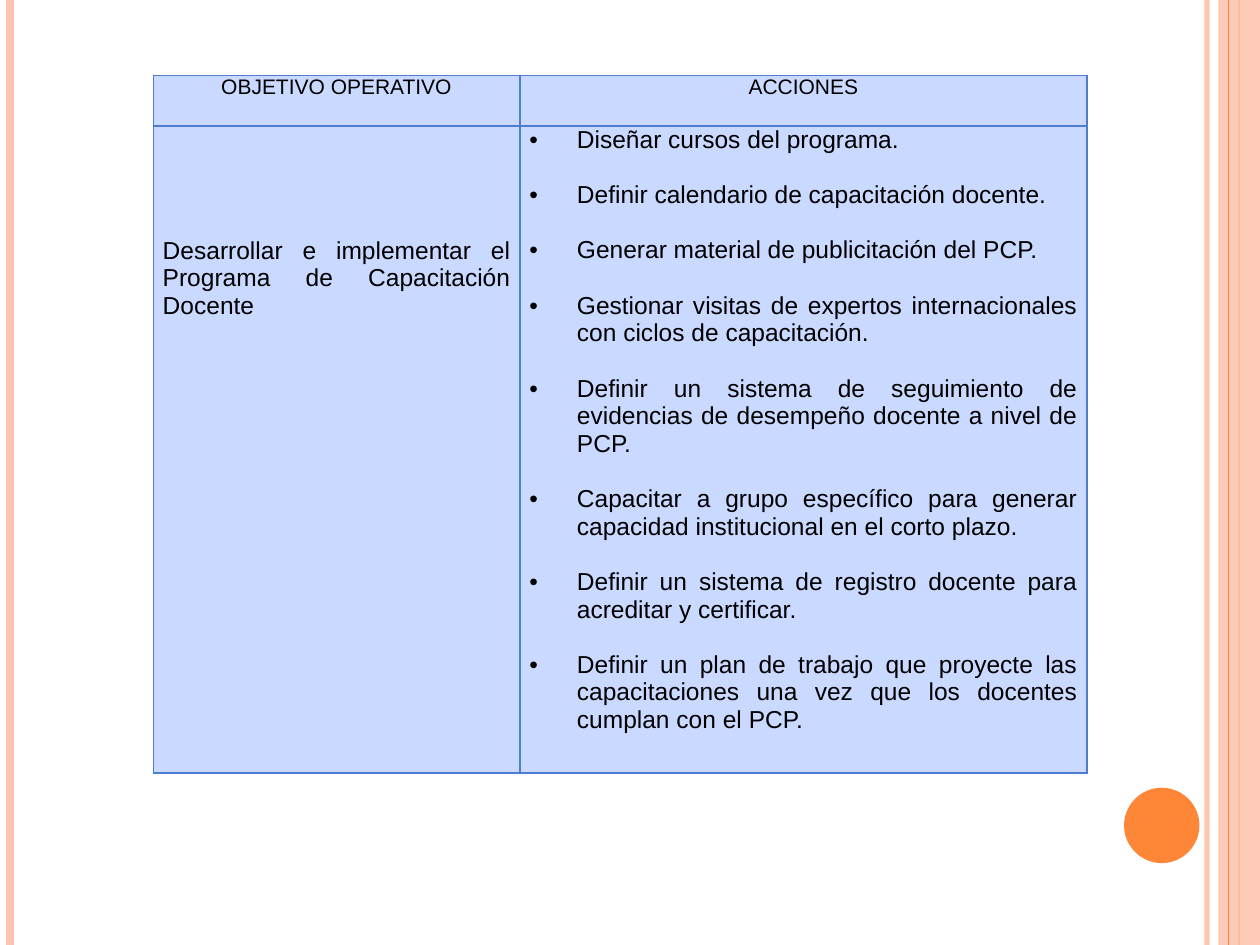
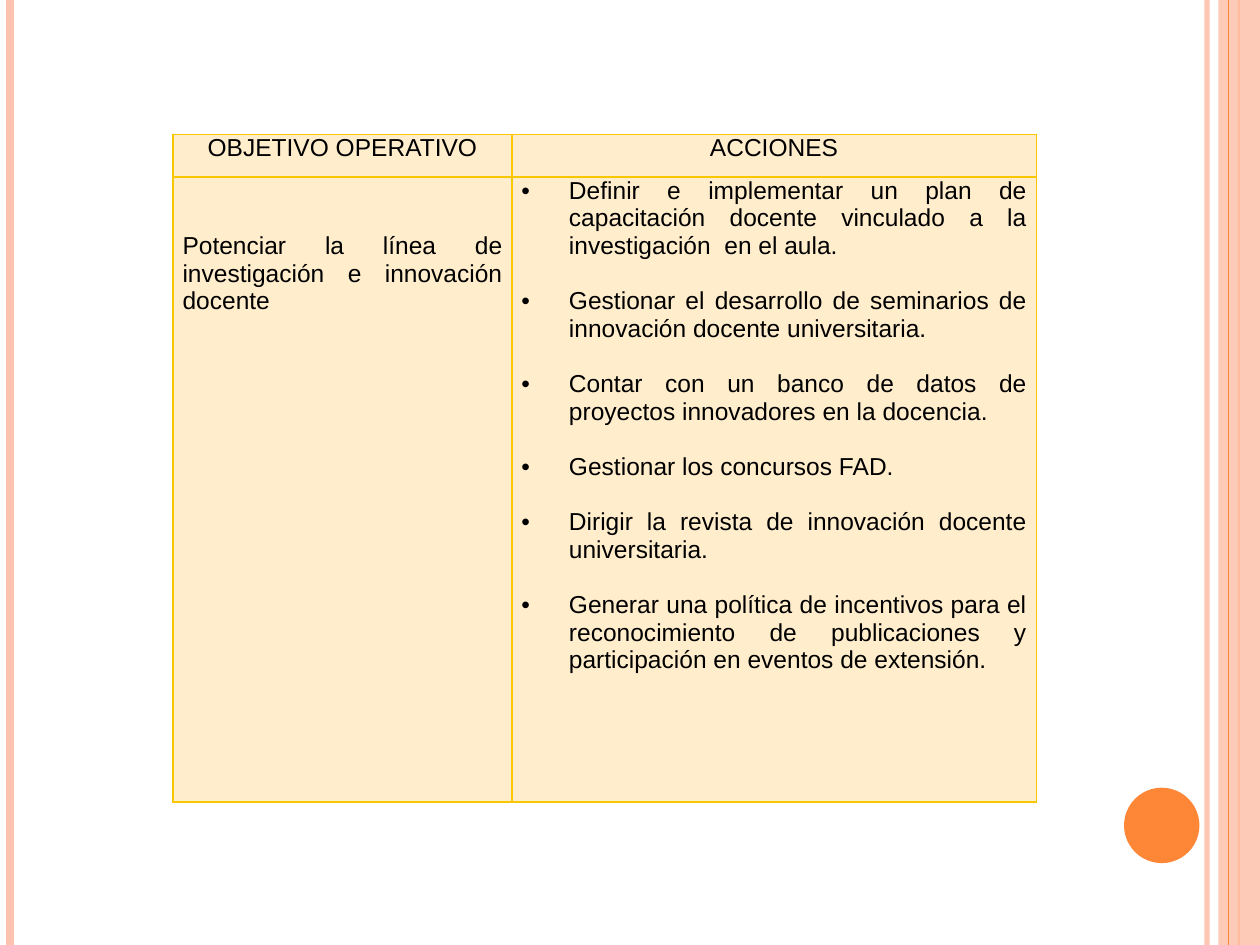
from lxml.etree import SubElement
from pptx import Presentation
from pptx.dml.color import RGBColor
from pptx.enum.shapes import MSO_CONNECTOR, MSO_SHAPE
from pptx.enum.text import PP_ALIGN
from pptx.oxml.ns import qn
from pptx.util import Cm, Pt

HEADERS = ("OBJETIVO OPERATIVO", "ACCIONES")
PINK = RGBColor(0xFE, 0xC3, 0xAE)
ORANGE = RGBColor(0xFE, 0x86, 0x37)
BLACK = RGBColor(0, 0, 0)
FONT = "Arial"
BODY_SIZE = 14
ACTION_GAP = 15.9  # one body line, in points
INDENT = Cm(0.96)
SLIDE_W, SLIDE_H = Cm(25.4), Cm(19.05)

# Lengths in cm; objective_top is the space above the objective
PLANS = [
    dict(
        objective="Desarrollar e implementar el Programa de Capacitación Docente",
        actions=[
            "Diseñar cursos del programa.",
            "Definir calendario de capacitación docente.",
            "Generar material de publicitación del PCP.",
            "Gestionar visitas de expertos internacionales con ciclos de capacitación.",
            "Definir un sistema de seguimiento de evidencias de desempeño docente a nivel de PCP.",
            "Capacitar a grupo específico para generar capacidad institucional en el corto plazo.",
            "Definir un sistema de registro docente para acreditar y certificar.",
            "Definir un plan de trabajo que proyecte las capacitaciones una vez que los docentes "
            "cumplan con el PCP.",
        ],
        left=3.09, top=1.52, cols=(7.39, 11.43), rows=(1.02, 13.04),
        header_size=12, objective_top=2.24,
        fill=RGBColor(0xCA, 0xD9, 0xFF), border=RGBColor(0x4F, 0x7C, 0xCF),
    ),
    dict(
        objective="Potenciar la línea de investigación e innovación docente",
        actions=[
            "Definir e implementar un plan de capacitación docente vinculado a la "
            "investigación  en el aula.",
            "Gestionar el desarrollo de seminarios de innovación docente universitaria.",
            "Contar con un banco de datos de proyectos innovadores en la docencia.",
            "Gestionar los concursos FAD.",
            "Dirigir la revista de innovación docente universitaria.",
            "Generar una política de incentivos para el reconocimiento de publicaciones y "
            "participación en eventos de extensión.",
        ],
        left=3.49, top=2.71, cols=(6.83, 10.57), rows=(0.86, 12.6),
        header_size=14, objective_top=1.12,
        fill=RGBColor(0xFF, 0xED, 0xCC), border=RGBColor(0xF8, 0xC7, 0x00),
    ),
]


def set_alpha(shape, percent):
    color = shape._element.spPr.find(".//" + qn("a:srgbClr"))
    SubElement(color, qn("a:alpha"), val=str(percent * 1000))


def add_band_line(s, x, color, width):
    line = s.shapes.add_connector(MSO_CONNECTOR.STRAIGHT, Cm(x), 0, Cm(x), SLIDE_H)
    line.line.color.rgb = color
    line.line.width = Pt(width)
    SubElement(line._element.spPr, qn("a:effectLst"))
    return line


def add_filled_shape(s, kind, left, top, width, height, color):
    sp = s.shapes.add_shape(kind, left, top, width, height)
    sp.shadow.inherit = False
    sp.fill.solid()
    sp.fill.fore_color.rgb = color
    sp.line.fill.background()
    return sp


def add_side_bands(s):
    set_alpha(add_band_line(s, 24.33, PINK, 3), 93)
    add_band_line(s, 0.21, PINK, 4.5)
    add_band_line(s, 24.98, ORANGE, 1.5)
    band_left = Cm(24.56)
    band = add_filled_shape(s, MSO_SHAPE.RECTANGLE, band_left, 0,
                            SLIDE_W - band_left, SLIDE_H, PINK)
    set_alpha(band, 87)
    add_band_line(s, 24.76, ORANGE, 0.75)
    add_filled_shape(s, MSO_SHAPE.OVAL, Cm(22.66), Cm(15.88), Cm(1.52), Cm(1.52), ORANGE)


def style_cell(cell, fill, border, top=0):
    cell.margin_left = cell.margin_right = Cm(0.19)
    cell.margin_top, cell.margin_bottom = Cm(top), 0
    tcPr = cell._tc.get_or_add_tcPr()
    for side in ("lnL", "lnR", "lnT", "lnB"):
        ln = SubElement(tcPr, qn("a:" + side), w=str(Pt(1)))
        SubElement(SubElement(ln, qn("a:solidFill")), qn("a:srgbClr"), val=str(border))
    cell.fill.solid()
    cell.fill.fore_color.rgb = fill


def write(p, text, size=BODY_SIZE, align=PP_ALIGN.JUSTIFY, bullet=False, before=0):
    p.alignment = align
    p.space_before = Pt(before)
    if bullet:
        pPr = p._p.get_or_add_pPr()
        pPr.set("marL", str(INDENT))
        pPr.set("indent", str(-INDENT))
        SubElement(pPr, qn("a:buFont"), typeface=FONT)
        SubElement(pPr, qn("a:buChar"), char="•")
    r = p.add_run()
    r.text = text
    r.font.name, r.font.size = FONT, Pt(size)
    r.font.color.rgb = BLACK


def add_plan_table(s, plan):
    cols, rows = plan["cols"], plan["rows"]
    table = s.shapes.add_table(2, 2, Cm(plan["left"]), Cm(plan["top"]),
                               Cm(sum(cols)), Cm(sum(rows))).table
    table.first_row = table.horz_banding = False
    for col, width in zip(table.columns, cols):
        col.width = Cm(width)
    for row, height in zip(table.rows, rows):
        row.height = Cm(height)

    objective, actions = table.cell(1, 0), table.cell(1, 1)
    for cell in table.iter_cells():
        style_cell(cell, plan["fill"], plan["border"],
                   top=plan["objective_top"] if cell == objective else 0)
    for i, header in enumerate(HEADERS):
        write(table.cell(0, i).text_frame.paragraphs[0], header,
              size=plan["header_size"], align=PP_ALIGN.CENTER)
    write(objective.text_frame.paragraphs[0], plan["objective"])
    tf = actions.text_frame
    for i, action in enumerate(plan["actions"]):
        p = tf.add_paragraph() if i else tf.paragraphs[0]
        write(p, action, bullet=True, before=ACTION_GAP if i else 0)


def main():
    prs = Presentation()
    prs.slide_width, prs.slide_height = SLIDE_W, SLIDE_H
    for plan in PLANS:
        s = prs.slides.add_slide(prs.slide_layouts[6])
        add_side_bands(s)
        add_plan_table(s, plan)
    prs.save("out.pptx")


if __name__ == "__main__":
    main()
